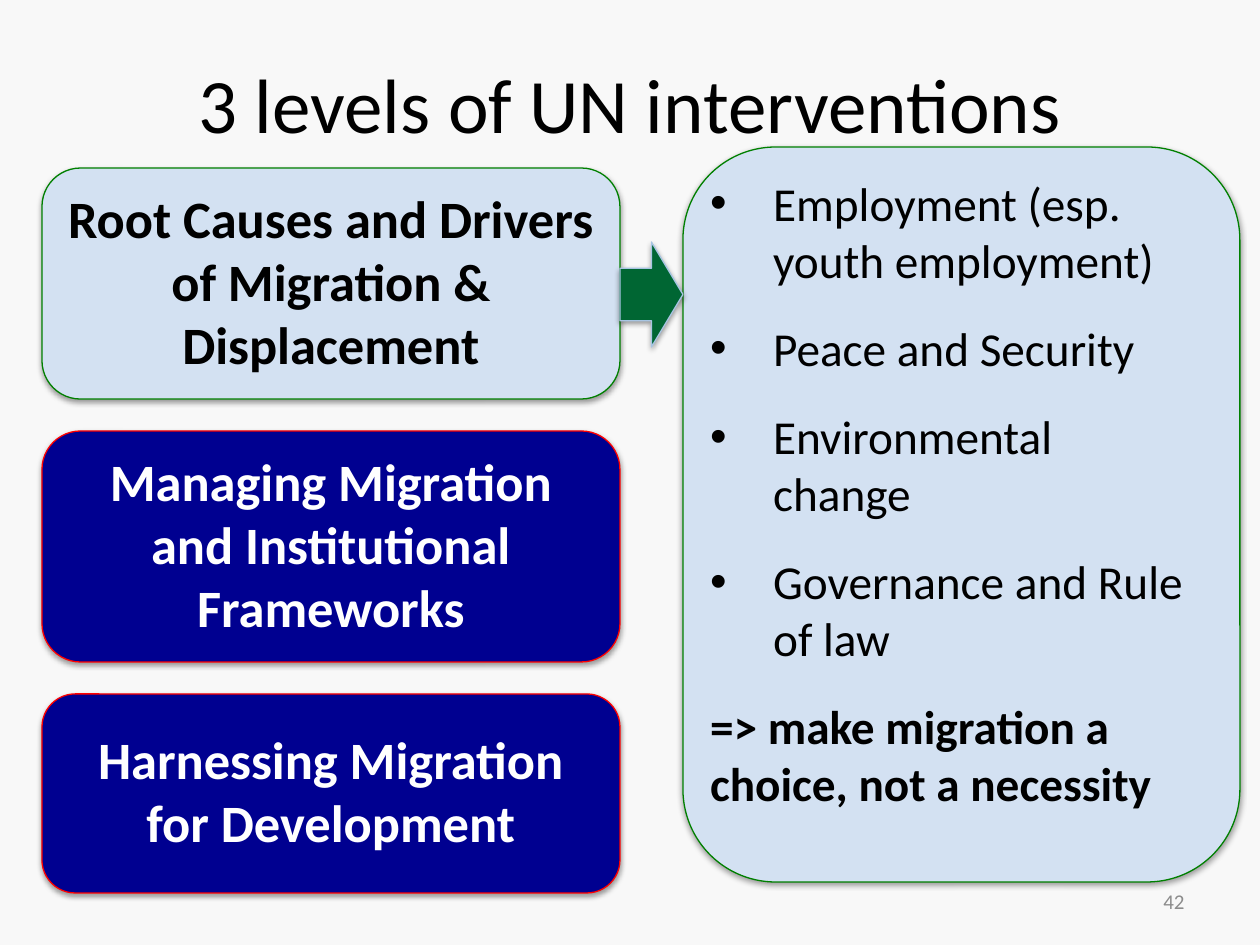
from lxml import etree
from pptx import Presentation
from pptx.dml.color import RGBColor
from pptx.enum.shapes import MSO_SHAPE
from pptx.enum.text import MSO_ANCHOR, PP_ALIGN
from pptx.oxml.ns import qn
from pptx.util import Pt

ROUNDED = MSO_SHAPE.ROUNDED_RECTANGLE
ARROW = MSO_SHAPE.RIGHT_ARROW
TOP, MIDDLE = MSO_ANCHOR.TOP, MSO_ANCHOR.MIDDLE
LEFT, CENTER, RIGHT = PP_ALIGN.LEFT, PP_ALIGN.CENTER, PP_ALIGN.RIGHT

PX_PER_INCH = 126
FONT = "Calibri"
COLORS = {
    "page": "F8F8F8", "black": "000000", "white": "FFFFFF", "gray": "8C8C8C",
    "navy": "000090", "red": "FF0000", "pale": "D3E1F2", "green": "008000",
    "arrow": "006633", "arrow_edge": "A8C5E3",
}
LEVELS = [
    ("Root Causes and Drivers of Migration & Displacement", 231, "pale", "green", "black"),
    ("Managing Migration and Institutional Frameworks", 231, "navy", "red", "white"),
    ("Harnessing Migration for Development", 199, "navy", "red", "white"),
]
DRIVERS = [
    "Employment (esp. youth employment)",
    "Peace and Security",
    "Environmental change",
    "Governance and Rule of law",
]
CONCLUSION = "=> make migration a choice, not a necessity"


def px(length):
    return round(length * 914400 / PX_PER_INCH)


def color(name):
    return RGBColor.from_string(COLORS[name])


def style_para(para, size, ink, align, bold=False):
    para.alignment = align
    for span in para.runs:
        span.font.name = FONT
        span.font.size = Pt(size)
        span.font.bold = bold
        span.font.color.rgb = color(ink)


def add_label(page, box, text, size, ink, align):
    frame = page.shapes.add_textbox(*map(px, box)).text_frame
    frame.word_wrap = True
    frame.vertical_anchor = MIDDLE
    frame.text = text
    style_para(frame.paragraphs[0], size, ink, align)


def add_shadow(shape):
    shape.shadow.inherit = False
    effects = shape._element.spPr.find(qn("a:effectLst"))
    shadow = etree.SubElement(effects, qn("a:outerShdw"), blurRad="40000",
                              dist="20000", dir="5400000", rotWithShape="0")
    tint = etree.SubElement(shadow, qn("a:srgbClr"), val=COLORS["black"])
    etree.SubElement(tint, qn("a:alpha"), val="38000")


def add_panel(page, kind, box, fill, edge):
    shape = page.shapes.add_shape(kind, *map(px, box))
    shape.fill.solid()
    shape.fill.fore_color.rgb = color(fill)
    shape.line.color.rgb = color(edge)
    shape.line.width = Pt(0.75)
    add_shadow(shape)
    frame = shape.text_frame
    frame.word_wrap = True
    frame.margin_top = 0
    return shape


def add_bullet(para):
    properties = para._p.get_or_add_pPr()
    properties.set("marL", str(px(63)))
    properties.set("indent", str(px(-63)))
    etree.SubElement(properties, qn("a:buFont"), typeface="Arial")
    etree.SubElement(properties, qn("a:buChar"), char="•")


def add_levels(page, box, gap):
    left, top, width, height = box
    for text, level_height, fill, edge, ink in LEVELS:
        panel = add_panel(page, ROUNDED, (left, top, width, level_height), fill, edge)
        frame = panel.text_frame
        frame.vertical_anchor = MIDDLE
        frame.text = text
        style_para(frame.paragraphs[0], 30, ink, CENTER, bold=True)
        top += level_height + gap


def add_drivers(page, box):
    frame = add_panel(page, ROUNDED, box, "pale", "green").text_frame
    frame.vertical_anchor = TOP
    frame.margin_left = 0
    frame.text = "\n".join(DRIVERS + [CONCLUSION])
    *drivers, conclusion = frame.paragraphs
    for para in drivers:
        style_para(para, 27, "black", LEFT)
        para.space_after = Pt(18)
        add_bullet(para)
    style_para(conclusion, 27, "black", LEFT, bold=True)


def main():
    deck = Presentation()
    deck.slide_width, deck.slide_height = px(1260), px(945)
    page = deck.slides.add_slide(deck.slide_layouts[6])
    page.background.fill.solid()
    page.background.fill.fore_color.rgb = color("page")
    add_label(page, (903, 876, 294, 50), "42", 12, "gray", RIGHT)
    add_label(page, (63, 38, 1134, 130), "3 levels of UN interventions", 44, "black", CENTER)
    add_levels(page, (42, 168, 578, 725), 32)
    add_drivers(page, (683, 147, 557, 735))
    add_panel(page, ARROW, (620, 242, 63, 105), "arrow", "arrow_edge")
    deck.save("out.pptx")


if __name__ == "__main__":
    main()
